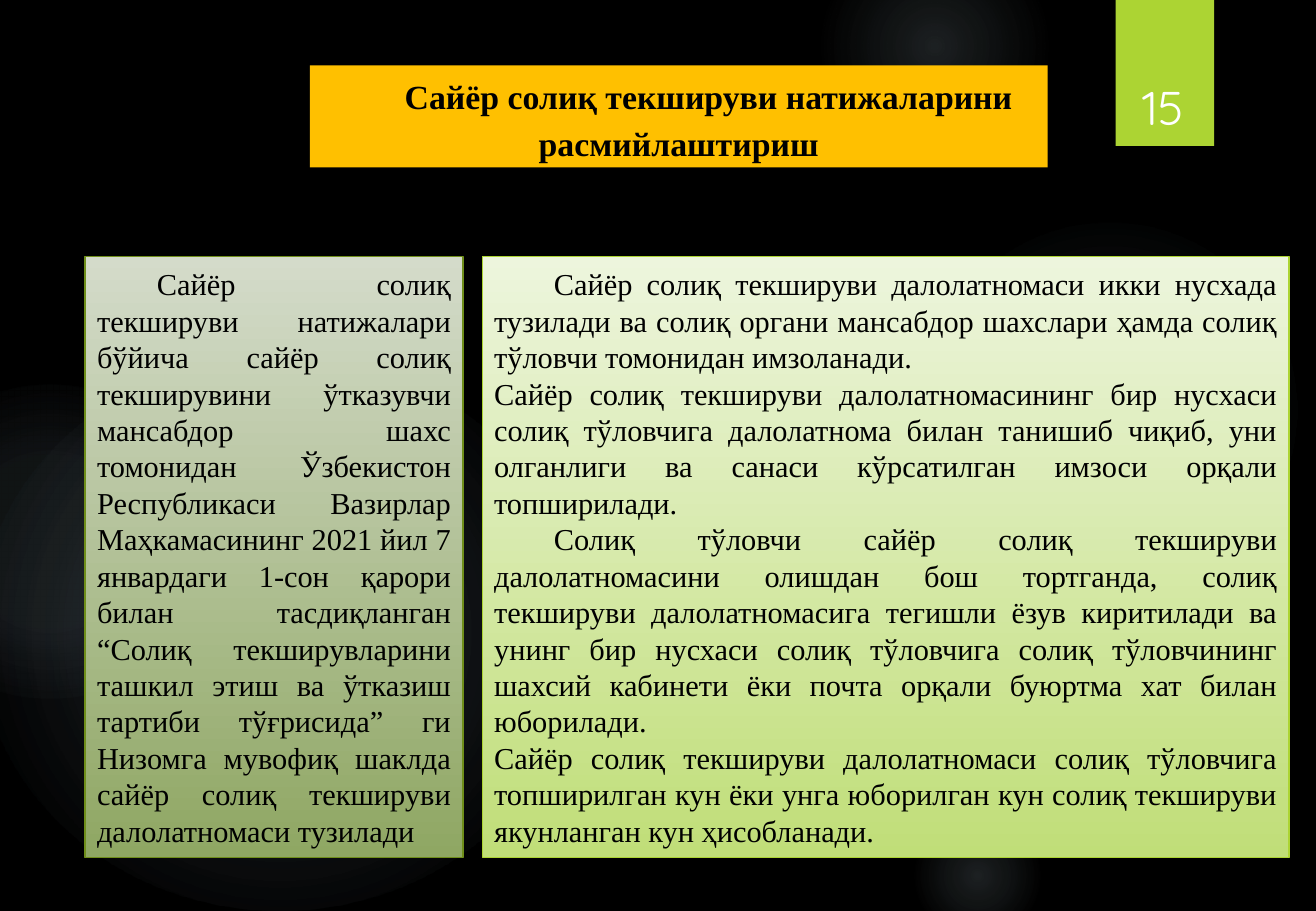
"""Build the slide on recording the results of a mobile tax audit."""
from lxml import etree
from pptx import Presentation
from pptx import util as u
from pptx.dml.color import RGBColor
from pptx.enum import shapes, text
from pptx.oxml.ns import nsdecls

SERIF = "Times New Roman"
BLACK, WHITE, LIME, AMBER, GLOW = "000000", "FFFFFF", "ACD433", "FFC000", "CAE7F9"
INDENT = 1.25

GLOWS = [
    ((18.95, 4.65, 8.48, 7.82), [(0, 7), (36, 6), (69, 0)]),
    ((17.12, -1.27, 4.83, 4.45), [(0, 14), (36, 7), (73, 0)]),
    ((18.95, 16.94, 2.97, 2.74), [(0, 14), (36, 7), (66, 0)]),
    ((-0.46, 7.42, 12.62, 11.63), [(0, 11), (36, 10), (75, 0)]),
    ((-2.51, 8.05, 7.11, 6.55), [(0, 8), (36, 8), (72, 0)]),
]
PAGE_TAB = (23.32, 0, 2.06, 3.05)
PAGE_NUMBER = ("15", (23.37, 0.81, 1.88, 2.13))
TITLE = ("Сайёр солиқ текшируви натижаларини расмийлаштириш", (6.48, 1.37, 15.42, 2.13))
PANEL_TOP, PANEL_HEIGHT = 5.36, 12.57
PANELS = [
    {
        "left": 1.78, "width": 7.9, "shades": ("D4DBCA", "8FA763"), "border": "6F8E1A",
        "paragraphs": [
            (INDENT, "Сайёр солиқ текшируви натижалари бўйича сайёр солиқ текширувини "
             "ўтказувчи мансабдор шахс томонидан Ўзбекистон Республикаси Вазирлар "
             "Маҳкамасининг 2021 йил 7 январдаги 1-сон қарори билан тасдиқланган “Солиқ "
             "текширувларини ташкил этиш ва ўтказиш тартиби тўғрисида” ги Низомга мувофиқ "
             "шаклда сайёр солиқ текшируви далолатномаси тузилади"),
        ],
    },
    {
        "left": 10.08, "width": 16.87, "shades": ("EDF5DD", "C0DE78"), "border": LIME,
        "paragraphs": [
            (INDENT, "Сайёр солиқ текшируви далолатномаси икки нусхада тузилади ва солиқ "
             "органи мансабдор шахслари ҳамда солиқ тўловчи томонидан имзоланади."),
            (0, "Сайёр солиқ текшируви далолатномасининг бир нусхаси солиқ тўловчига "
             "далолатнома билан танишиб чиқиб, уни олганлиги ва санаси кўрсатилган имзоси "
             "орқали топширилади."),
            (INDENT, "Солиқ тўловчи сайёр солиқ текшируви далолатномасини олишдан бош "
             "тортганда, солиқ текшируви далолатномасига тегишли ёзув киритилади ва унинг "
             "бир нусхаси солиқ тўловчига солиқ тўловчининг шахсий кабинети ёки почта "
             "орқали буюртма хат билан юборилади."),
            (0, "Сайёр солиқ текшируви далолатномаси солиқ тўловчига топширилган кун ёки "
             "унга юборилган кун солиқ текшируви якунланган кун ҳисобланади."),
        ],
    },
]


def color(value):
    return RGBColor.from_string(value)


def add_block(slide, kind, box, fill=None):
    block = slide.shapes.add_shape(kind, *map(u.Cm, box))
    block.shadow.inherit = False
    block.line.fill.background()
    if fill:
        block.fill.solid()
        block.fill.fore_color.rgb = color(fill)
    return block


def add_glow(slide, box, stops):
    glow = add_block(slide, shapes.MSO_SHAPE.OVAL, box, GLOW)
    stop_xml = "".join(
        f'<a:gs pos="{pos * 1000}"><a:srgbClr val="{GLOW}">'
        f'<a:alpha val="{alpha * 1000}"/></a:srgbClr></a:gs>'
        for pos, alpha in stops)
    radial = etree.fromstring(
        f'<a:gradFill {nsdecls("a")} rotWithShape="1"><a:gsLst>{stop_xml}</a:gsLst>'
        '<a:path path="circle"><a:fillToRect l="50000" t="50000" r="50000" b="50000"/>'
        '</a:path></a:gradFill>')
    properties = glow.element.spPr
    properties.replace(properties.find("{*}solidFill"), radial)


def write(block, paragraphs, align, size, font=SERIF, ink=BLACK, bold=False, spacing=1.0,
          anchor=text.MSO_ANCHOR.MIDDLE):
    frame = block.text_frame
    frame.word_wrap = True
    frame.vertical_anchor = anchor
    for number, (indent, words) in enumerate(paragraphs):
        paragraph = frame.add_paragraph() if number else frame.paragraphs[0]
        paragraph.alignment = align
        paragraph.line_spacing = spacing
        if indent:
            paragraph._p.get_or_add_pPr().set("indent", str(u.Cm(indent)))
        run = paragraph.add_run()
        run.text = words
        run.font.name = font
        run.font.size = u.Pt(size)
        run.font.bold = bold
        run.font.color.rgb = color(ink)


def add_panel(slide, panel):
    box = (panel["left"], PANEL_TOP, panel["width"], PANEL_HEIGHT)
    block = add_block(slide, shapes.MSO_SHAPE.RECTANGLE, box)
    block.fill.gradient()
    block.fill.gradient_angle = 270
    for stop, shade in zip(block.fill.gradient_stops, panel["shades"]):
        stop.color.rgb = color(shade)
    block.line.color.rgb = color(panel["border"])
    block.line.width = u.Pt(0.75)
    write(block, panel["paragraphs"], text.PP_ALIGN.JUSTIFY, 18)


def main():
    deck = Presentation()
    deck.slide_width, deck.slide_height = u.Cm(27.51), u.Cm(19.05)
    slide = deck.slides.add_slide(deck.slide_layouts[6])
    slide.background.fill.solid()
    slide.background.fill.fore_color.rgb = color(BLACK)

    for box, stops in GLOWS:
        add_glow(slide, box, stops)

    add_block(slide, shapes.MSO_SHAPE.RECTANGLE, PAGE_TAB, LIME)
    number, box = PAGE_NUMBER
    write(slide.shapes.add_textbox(*map(u.Cm, box)), [(0, number)], text.PP_ALIGN.CENTER, 28,
          font="Quicksand", ink=WHITE, anchor=text.MSO_ANCHOR.BOTTOM)

    heading, box = TITLE
    banner = add_block(slide, shapes.MSO_SHAPE.RECTANGLE, box, AMBER)
    write(banner, [(INDENT, heading)], text.PP_ALIGN.CENTER, 20, bold=True, spacing=1.15)

    for panel in PANELS:
        add_panel(slide, panel)

    deck.save("out.pptx")


if __name__ == "__main__":
    main()
